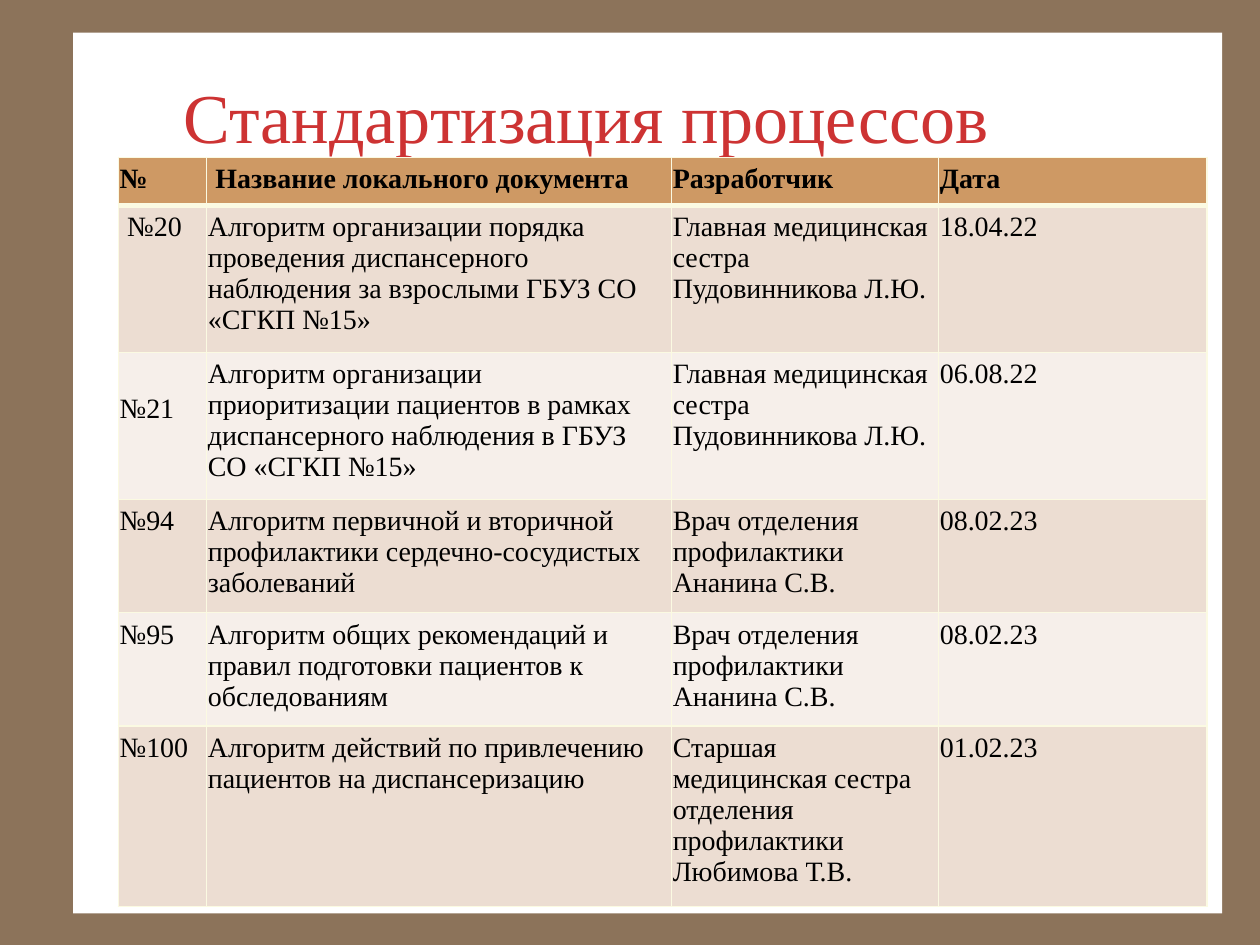
from lxml import etree
from pptx import Presentation
from pptx.dml.color import RGBColor
from pptx.enum.shapes import MSO_SHAPE
from pptx.enum.text import MSO_ANCHOR
from pptx.oxml.ns import qn
from pptx.util import Inches, Pt

RECT = MSO_SHAPE.RECTANGLE
MIDDLE = MSO_ANCHOR.MIDDLE
FACE = "Times New Roman"
EDGE = "FBFAE2"
HEAD = "CE9964"
BANDS = ("ECDDD2", "F6EFEA")
COLS = (0.7, 3.69, 2.12, 2.13)
HEIGHTS = (0.38, 1.1, 1.1, 0.85, 0.85, 1.35)
NURSE = "Главная медицинская сестра\nПудовинникова Л.Ю."
DOCTOR = "Врач отделения профилактики Ананина С.В."
ROWS = (
    ("№", "Название локального документа", "Разработчик", "Дата"),
    ("№20", "Алгоритм организации порядка проведения диспансерного "
     "наблюдения за взрослыми ГБУЗ СО «СГКП №15»", NURSE, "18.04.22"),
    ("№21", "Алгоритм организации приоритизации пациентов в рамках "
     "диспансерного наблюдения в ГБУЗ СО «СГКП №15»", NURSE, "06.08.22"),
    ("№94", "Алгоритм первичной и вторичной профилактики "
     "сердечно-сосудистых заболеваний", DOCTOR, "08.02.23"),
    ("№95", "Алгоритм общих рекомендаций и правил подготовки пациентов "
     "к обследованиям", DOCTOR, "08.02.23"),
    ("№100", "Алгоритм действий по привлечению пациентов на диспансеризацию",
     "Старшая медицинская сестра отделения профилактики\nЛюбимова Т.В.",
     "01.02.23"),
)
# Cells set in from the usual margins: (row, column) -> (left, top)
INSETS = {(0, 1): (0.07, 0.05), (1, 0): (0.07, 0.05), (2, 0): (0.01, 0.33)}


def paint(fill, color):
    fill.solid()
    fill.fore_color.rgb = RGBColor.from_string(color)


def style(frame, size, color, bold=False):
    for para in frame.paragraphs:
        font = para.font
        font.name, font.size, font.bold = FACE, Pt(size), bold
        font.color.rgb = RGBColor.from_string(color)


def add_panel(slide):
    panel = slide.shapes.add_shape(
        RECT, Inches(0.58), Inches(0.26), Inches(9.12), Inches(6.99))
    panel.shadow.inherit = False
    paint(panel.fill, "FFFFFF")
    panel.line.fill.background()


def add_title(slide, text):
    box = slide.shapes.add_textbox(
        Inches(1.08), Inches(0.5), Inches(8.5), Inches(0.83))
    frame = box.text_frame
    frame.word_wrap = True
    frame.vertical_anchor = MIDDLE
    frame.margin_left = Inches(0.38)
    frame.text = text
    style(frame, 40, "CD3333")


def add_edges(cell, widths):
    """Draw cell borders; widths maps a side (L, R, T, B) to points."""
    props = cell._tc.get_or_add_tcPr()
    for spot, (side, width) in enumerate(widths.items()):
        line = etree.Element(qn(f"a:ln{side}"), w=str(Pt(width)))
        fill = etree.SubElement(line, qn("a:solidFill"))
        etree.SubElement(fill, qn("a:srgbClr"), val=EDGE)
        props.insert(spot, line)


def fill_cell(cell, text, row, col):
    left, top = INSETS.get((row, col), (0.01, 0.05))
    cell.margin_left, cell.margin_right = Inches(left), Inches(0.01)
    cell.margin_top, cell.margin_bottom = Inches(top), Inches(0.05)
    cell.text = text
    style(cell.text_frame, 16, "000000", bold=row == 0)
    paint(cell.fill, BANDS[(row - 1) % 2] if row else HEAD)
    add_edges(cell, {"L": 0.96, "R": 0.96,
                     "T": 3 if row == 1 else 0.96,
                     "B": 3 if row == 0 else 0.96})


def add_grid(slide):
    table = slide.shapes.add_table(
        len(ROWS), len(COLS), Inches(0.94), Inches(1.25),
        Inches(sum(COLS)), Inches(sum(HEIGHTS))).table
    for col, width in enumerate(COLS):
        table.columns[col].width = Inches(width)
    for row, texts in enumerate(ROWS):
        table.rows[row].height = Inches(HEIGHTS[row])
        for col, text in enumerate(texts):
            fill_cell(table.cell(row, col), text, row, col)


def main():
    deck = Presentation()
    deck.slide_width, deck.slide_height = Inches(10), Inches(7.5)
    slide = deck.slides.add_slide(deck.slide_layouts[6])
    paint(slide.background.fill, "8C735A")
    add_panel(slide)
    add_title(slide, "Стандартизация процессов")
    add_grid(slide)
    deck.save("out.pptx")


if __name__ == "__main__":
    main()
